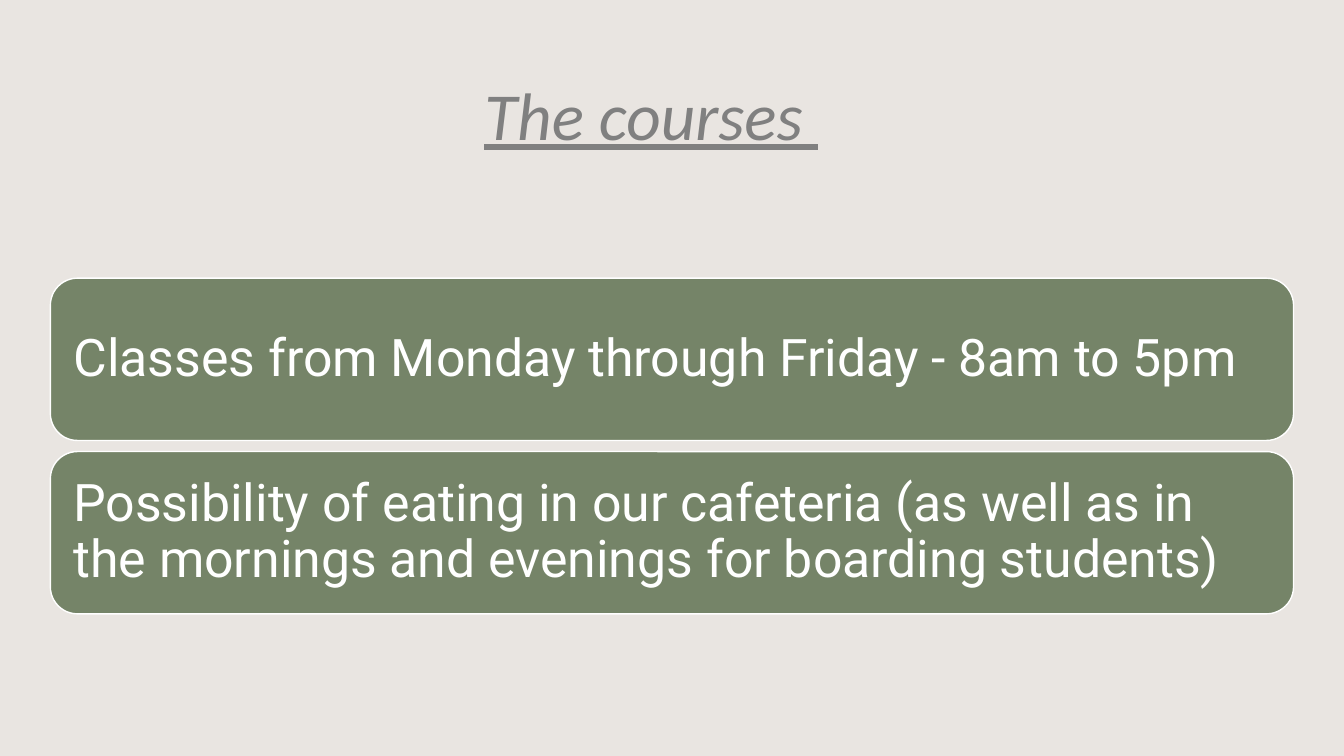
import dataclasses

import pptx
import pptx.dml.color
import pptx.enum.shapes
import pptx.enum.text
import pptx.slide
import pptx.text.text
import pptx.util

PX = 9144

BACKGROUND = pptx.dml.color.RGBColor(0xE9, 0xE5, 0xE1)
GREEN = pptx.dml.color.RGBColor(0x75, 0x84, 0x68)
GREY = pptx.dml.color.RGBColor(0x80, 0x80, 0x80)
WHITE = pptx.dml.color.RGBColor(0xFF, 0xFF, 0xFF)

CARD_LEFT, CARD_TOP = 50, 276
CARD_WIDTH, CARD_HEIGHT = 1233, 161
CARD_PITCH = 172
CARD_INSET = 15


@dataclasses.dataclass(frozen=True)
class Card:
    text: str
    top: int


CARD_TEXTS = (
    "Classes from Monday through Friday - 8am to 5pm",
    "Possibility of eating in our cafeteria (as well as in the mornings "
    "and evenings for boarding students)",
)
CARDS = [Card(text, CARD_TOP + i * CARD_PITCH) for i, text in enumerate(CARD_TEXTS)]


def px(length: int) -> pptx.util.Emu:
    return pptx.util.Emu(length * PX)


def style_run(
    r: pptx.text.text._Run, name: str, size: int, color: pptx.dml.color.RGBColor
) -> None:
    r.font.name = name
    r.font.size = pptx.util.Pt(size)
    r.font.color.rgb = color


def draw_title(s: pptx.slide.Slide, text: str) -> None:
    sp = s.shapes.add_textbox(px(50), px(40), px(1192), px(145))
    tf = sp.text_frame
    tf.word_wrap = True
    tf.vertical_anchor = pptx.enum.text.MSO_ANCHOR.MIDDLE
    tf.text = text
    p = tf.paragraphs[0]
    p.alignment = pptx.enum.text.PP_ALIGN.CENTER
    r = p.runs[0]
    style_run(r, "Calibri", 48, GREY)
    r.font.italic = True
    r.font.underline = True


def draw_card(s: pptx.slide.Slide, card: Card) -> None:
    sp = s.shapes.add_shape(
        pptx.enum.shapes.MSO_SHAPE.ROUNDED_RECTANGLE,
        px(CARD_LEFT), px(card.top), px(CARD_WIDTH), px(CARD_HEIGHT),
    )
    sp.shadow.inherit = False
    sp.fill.solid()
    sp.fill.fore_color.rgb = GREEN
    sp.line.color.rgb = WHITE
    sp.line.width = pptx.util.Pt(1)
    tf = sp.text_frame
    tf.word_wrap = True
    tf.vertical_anchor = pptx.enum.text.MSO_ANCHOR.MIDDLE
    tf.margin_left = tf.margin_right = px(CARD_INSET)
    tf.margin_top = tf.margin_bottom = px(CARD_INSET)
    tf.text = card.text
    p = tf.paragraphs[0]
    p.alignment = pptx.enum.text.PP_ALIGN.LEFT
    p.line_spacing = 0.9
    style_run(p.runs[0], "Roboto", 37, WHITE)


def main() -> None:
    prs = pptx.Presentation()
    prs.slide_width = px(1333)
    prs.slide_height = px(750)
    s = prs.slides.add_slide(prs.slide_layouts[6])
    s.background.fill.solid()
    s.background.fill.fore_color.rgb = BACKGROUND
    draw_title(s, "The courses ")
    for card in CARDS:
        draw_card(s, card)
    prs.save("out.pptx")


if __name__ == "__main__":
    main()
